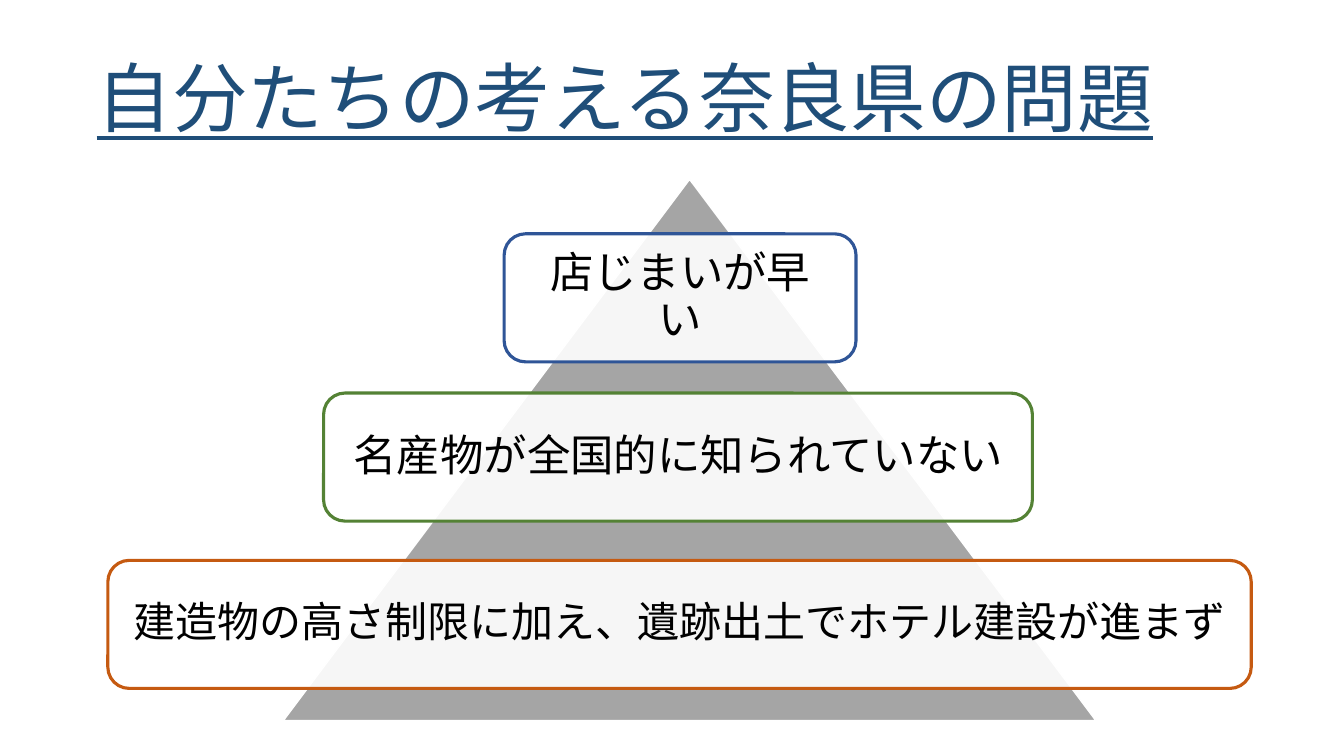
import pptx
import pptx.dml.color
import pptx.enum.shapes
import pptx.enum.text
import pptx.oxml
import pptx.oxml.ns
import pptx.util
from pptx.util import Inches

FONT = "Noto Sans CJK JP"
SHAPES = pptx.enum.shapes.MSO_SHAPE
ALIGN = pptx.enum.text.PP_ALIGN

BOX_HEIGHT = 1.27

# Text, left, top, width, outline colour, text size, inset
PROBLEMS = [
    ("店じまいが早い", 5, 2.32, 3.49, "2F5597", 31, 0.19),
    ("名産物が全国的に知られていない", 3.21, 3.9, 7.03, "548235", 31, 0.19),
    ("建造物の高さ制限に加え、遺跡出土でホテル建設が進まず",
     1.07, 5.56, 11.34, "C55A11", 30, 0.18),
]


def colour(value):
    return pptx.dml.color.RGBColor.from_string(value)


def write_text(shape, text, size, text_colour, alignment, inset, underline=False):
    frame = shape.text_frame
    frame.word_wrap = True
    frame.vertical_anchor = pptx.enum.text.MSO_ANCHOR.MIDDLE
    frame.margin_left = frame.margin_right = Inches(inset)
    paragraph = frame.paragraphs[0]
    paragraph.alignment = alignment
    paragraph.line_spacing = 0.9
    run = paragraph.add_run()
    run.text = text
    run.font.size = pptx.util.Pt(size)
    run.font.name = FONT
    run.font.color.rgb = colour(text_colour)
    if underline:
        run.font.underline = True
    # Japanese characters take the East Asian typeface
    properties = run.font._element
    east_asian = pptx.oxml.parse_xml(
        f'<a:ea {pptx.oxml.ns.nsdecls("a")} typeface="{FONT}"/>')
    properties.find(pptx.oxml.ns.qn("a:latin")).addnext(east_asian)


def add_title(slide, text):
    title = slide.shapes.add_textbox(
        Inches(0.86), Inches(0.29), Inches(11.5), Inches(1.45))
    write_text(title, text, 54, "1F4E79", ALIGN.LEFT, 0.1, underline=True)


def add_outlined_shape(slide, kind, left, top, width, height, fill, line, line_width):
    shape = slide.shapes.add_shape(
        kind, Inches(left), Inches(top), Inches(width), Inches(height))
    shape.shadow.inherit = False
    shape.fill.solid()
    shape.fill.fore_color.rgb = colour(fill)
    shape.line.color.rgb = colour(line)
    shape.line.width = pptx.util.Pt(line_width)
    return shape


def set_opacity(shape, percent):
    fill_colour = shape._element.spPr.find(
        pptx.oxml.ns.qn("a:solidFill")).find(pptx.oxml.ns.qn("a:srgbClr"))
    fill_colour.append(pptx.oxml.parse_xml(
        f'<a:alpha {pptx.oxml.ns.nsdecls("a")} val="{percent * 1000}"/>'))


def add_problem(slide, text, left, top, width, line, size, inset):
    box = add_outlined_shape(slide, SHAPES.ROUNDED_RECTANGLE, left, top, width,
                             BOX_HEIGHT, "FFFFFF", line, 2.25)
    set_opacity(box, 90)
    write_text(box, text, size, "000000", ALIGN.CENTER, inset)


def main():
    presentation = pptx.Presentation()
    presentation.slide_width = Inches(13.33)
    presentation.slide_height = Inches(7.5)
    slide = presentation.slides.add_slide(presentation.slide_layouts[6])

    # Heading
    add_title(slide, "自分たちの考える奈良県の問題")

    # Pyramid behind the problems
    add_outlined_shape(slide, SHAPES.ISOSCELES_TRIANGLE, 2.81, 1.78, 8.06, 5.37,
                       "A5A5A5", "FFFFFF", 1)

    # Problems from top to base
    for problem in PROBLEMS:
        add_problem(slide, *problem)

    presentation.save("out.pptx")


if __name__ == "__main__":
    main()
